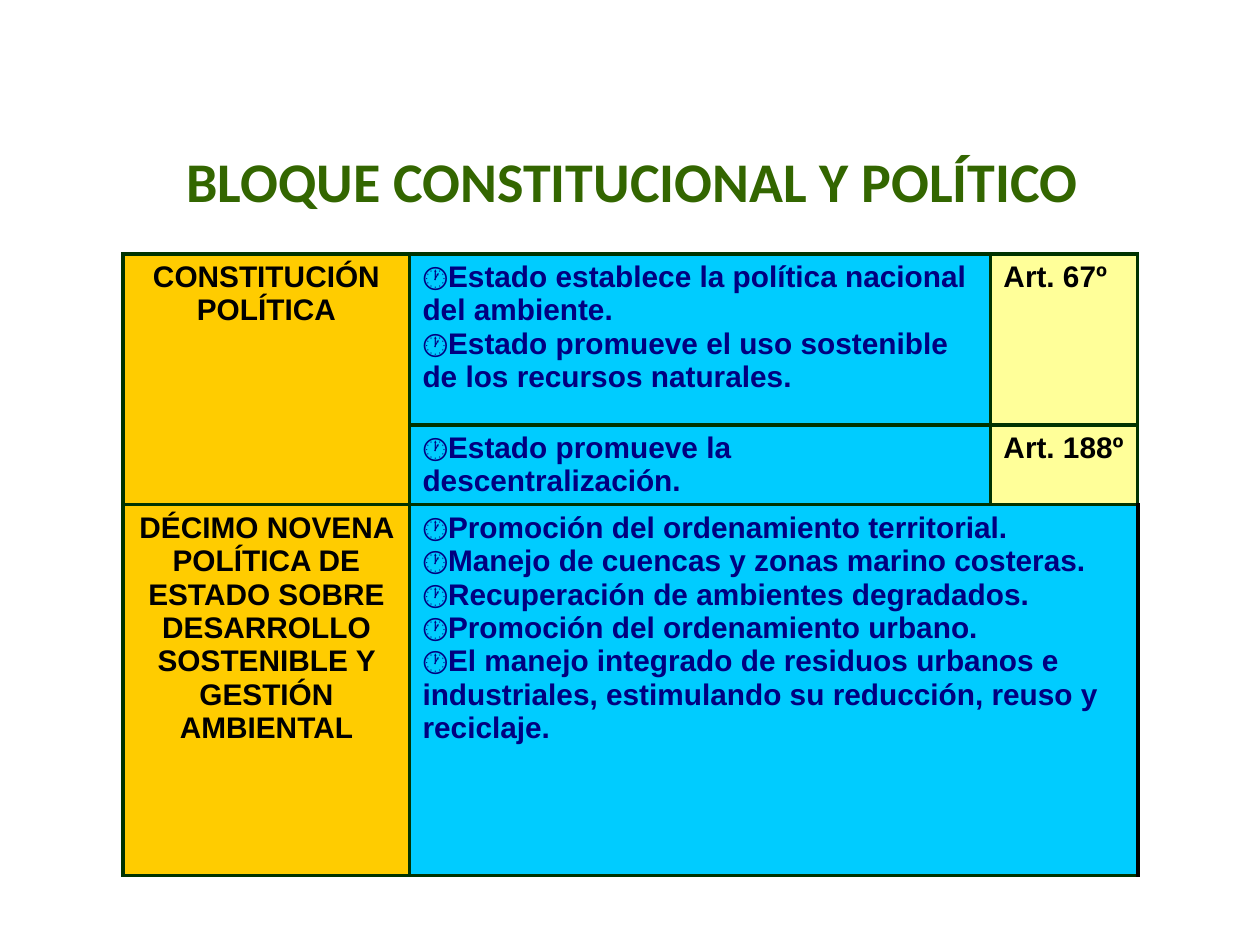
"""Slide with a table of the constitutional and political block on the environment."""
from lxml import etree
from pptx import Presentation
from pptx.dml.color import RGBColor
from pptx.enum.text import MSO_ANCHOR, PP_ALIGN
from pptx.oxml.ns import qn
from pptx.util import Pt

PX = 914400 // 126
GREEN = RGBColor(0x33, 0x66, 0x00)
BORDER = RGBColor(0x00, 0x33, 0x00)
BLACK = RGBColor(0x00, 0x00, 0x00)
NAVY = RGBColor(0x00, 0x00, 0x80)
ORANGE = RGBColor(0xFF, 0xCC, 0x00)
CYAN = RGBColor(0x00, 0xCC, 0xFF)
YELLOW = RGBColor(0xFF, 0xFF, 0x99)


def write(frame, lines, size=17, font="Arial", color=BLACK, align=PP_ALIGN.LEFT, bullet=None):
    frame.word_wrap = True
    for index, line in enumerate(lines):
        paragraph = frame.paragraphs[0] if index == 0 else frame.add_paragraph()
        paragraph.alignment = align
        run = paragraph.add_run()
        run.text = line
        run.font.size = Pt(size)
        run.font.name = font
        run.font.bold = True
        run.font.color.rgb = color
        if bullet:
            properties = paragraph._p.get_or_add_pPr()
            etree.SubElement(properties, qn("a:buFont"), typeface="Arial")
            etree.SubElement(properties, qn("a:buChar"), char=bullet)


def outline(cell, right=(BORDER, 2)):
    properties = cell._tc.get_or_add_tcPr()
    sides = {"L": (BORDER, 2), "R": right, "T": (BORDER, 2), "B": (BORDER, 2)}
    for position, (side, (color, width)) in enumerate(sides.items()):
        line = etree.Element(qn(f"a:ln{side}"), w=str(Pt(width)))
        solid = etree.SubElement(line, qn("a:solidFill"))
        etree.SubElement(solid, qn("a:srgbClr"), val=str(color))
        properties.insert(position, line)


presentation = Presentation()
presentation.slide_width = 1260 * PX
presentation.slide_height = 945 * PX
slide = presentation.slides.add_slide(presentation.slide_layouts[6])

column_widths = [287, 581, 147]
row_heights = [171, 80, 371]
block = slide.shapes.add_table(
    3, 3, 123 * PX, 254 * PX, sum(column_widths) * PX, sum(row_heights) * PX
).table
block.first_row = False
block.horz_banding = False
for column, width in zip(block.columns, column_widths):
    column.width = width * PX
for row, height in zip(block.rows, row_heights):
    row.height = height * PX

block.cell(0, 0).merge(block.cell(1, 0))
block.cell(2, 1).merge(block.cell(2, 2))

norm = dict(align=PP_ALIGN.CENTER)
duty = dict(color=NAVY, bullet="🕐")
entries = [
    (0, 0, ORANGE, norm, ["CONSTITUCIÓN POLÍTICA"]),
    (0, 1, CYAN, duty, [
        "Estado establece la política nacional del ambiente.",
        "Estado promueve el uso sostenible de los recursos naturales.",
    ]),
    (0, 2, YELLOW, {}, ["Art. 67º"]),
    (1, 1, CYAN, duty, ["Estado promueve la descentralización."]),
    (1, 2, YELLOW, {}, ["Art. 188º"]),
    (2, 0, ORANGE, norm, [
        "DÉCIMO NOVENA POLÍTICA DE ESTADO SOBRE DESARROLLO SOSTENIBLE Y GESTIÓN AMBIENTAL",
    ]),
    (2, 1, CYAN, duty, [
        "Promoción del ordenamiento territorial.",
        "Manejo de cuencas y zonas marino costeras.",
        "Recuperación de ambientes degradados.",
        "Promoción del ordenamiento urbano.",
        "El manejo integrado de residuos urbanos e industriales, "
        "estimulando su reducción, reuso y reciclaje.",
    ]),
]
for row, column, fill, style, lines in entries:
    cell = block.cell(row, column)
    cell.fill.solid()
    cell.fill.fore_color.rgb = fill
    write(cell.text_frame, lines, **style)

for cell in block.iter_cells():
    outline(cell, right=(BLACK, 2.25) if cell is block.cell(2, 1) or cell == block.cell(2, 1) else (BORDER, 2))

heading = slide.shapes.add_textbox(59 * PX, 125 * PX, 1147 * PX, 110 * PX).text_frame
heading.vertical_anchor = MSO_ANCHOR.MIDDLE
write(heading, ["BLOQUE CONSTITUCIONAL Y POLÍTICO"], size=32, font="Calibri",
      color=GREEN, align=PP_ALIGN.CENTER)

presentation.save("out.pptx")
